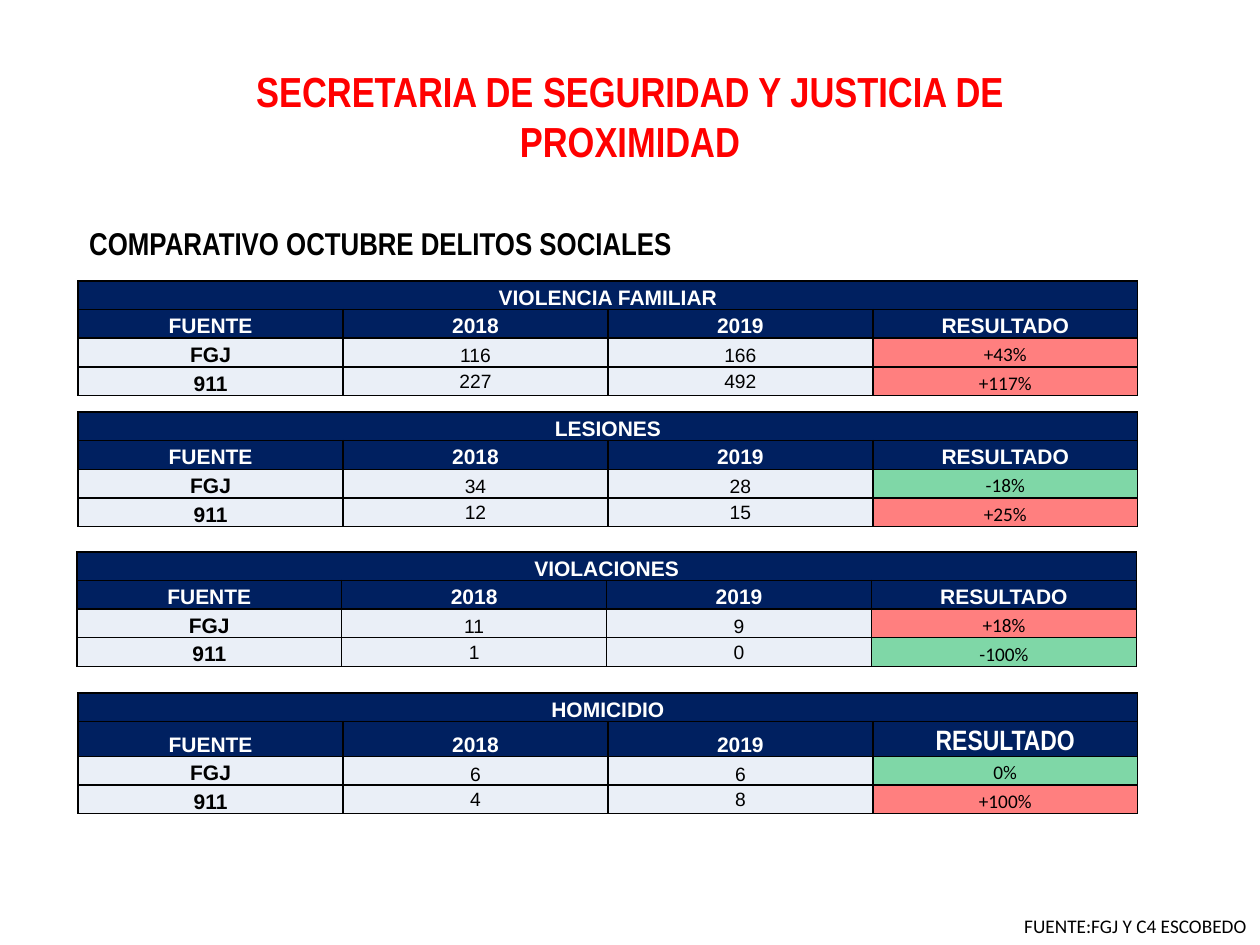
from lxml import etree
from pptx import Presentation
from pptx import util as u
from pptx.dml.color import RGBColor
from pptx.enum import text
from pptx.oxml import ns

COLORS = {
    "title": "FF0000", "ink": "000000", "header": "002060", "header_text": "FFFFFF",
    "body": "EAEFF7", "worse": "FF0000", "better": "00B050",
}
HEADINGS = ["FUENTE", "2018", "2019", "RESULTADO"]
LEFT, TABLE_WIDTH, TABLE_HEIGHT = 0.62, 8.41, 0.91


class SlideBuilder:
    def __init__(self, slide):
        self.slide = slide

    def add_run(self, frame, words, size, font, color, bold=False, align=None):
        paragraph = frame.paragraphs[0]
        paragraph.alignment = align
        run = paragraph.add_run()
        run.text = words
        run.font.size = u.Pt(size)
        run.font.name = font
        run.font.bold = bold
        run.font.color.rgb = RGBColor.from_string(COLORS[color])

    def title(self, words, left, top, width, height):
        heading = self.slide.shapes.title
        heading.left, heading.top = u.Inches(left), u.Inches(top)
        heading.width, heading.height = u.Inches(width), u.Inches(height)
        frame = heading.text_frame
        frame.vertical_anchor = text.MSO_ANCHOR.TOP
        frame.auto_size = text.MSO_AUTO_SIZE.SHAPE_TO_FIT_TEXT
        self.add_run(frame, words, 24, "Arial Narrow", "title", True, text.PP_ALIGN.CENTER)

    def label(self, words, left, top, width, height, size, font, bold=False, wrap=True):
        box = self.slide.shapes.add_textbox(
            u.Inches(left), u.Inches(top), u.Inches(width), u.Inches(height))
        box.text_frame.word_wrap = wrap
        box.text_frame.auto_size = text.MSO_AUTO_SIZE.SHAPE_TO_FIT_TEXT
        self.add_run(box.text_frame, words, size, font, "ink", bold)

    def style_cell(self, cell, fill, alpha=None, anchor=text.MSO_ANCHOR.BOTTOM):
        cell.margin_left = cell.margin_right = cell.margin_top = u.Inches(0.01)
        cell.margin_bottom = 0
        cell.vertical_anchor = anchor
        cell.fill.solid()
        cell.fill.fore_color.rgb = RGBColor.from_string(COLORS[fill])
        properties = cell._tc.get_or_add_tcPr()
        if alpha:
            tint = properties.find(".//" + ns.qn("a:srgbClr"))
            etree.SubElement(tint, ns.qn("a:alpha"), val=str(alpha * 1000))
        # Borders come before the fill
        for position, side in enumerate(("lnL", "lnR", "lnT", "lnB")):
            line = etree.Element(ns.qn("a:" + side), w=str(u.Pt(1)))
            solid = etree.SubElement(line, ns.qn("a:solidFill"))
            etree.SubElement(solid, ns.qn("a:srgbClr"), val=COLORS["ink"])
            properties.insert(position, line)

    def write_cell(self, cell, words, size, font, color, bold=False):
        self.add_run(cell.text_frame, words, size, font, color, bold, text.PP_ALIGN.CENTER)

    def crime_table(self, crime, left, top, records, result_font=("Arial", 12)):
        table = self.slide.shapes.add_table(
            4, len(HEADINGS), u.Inches(left), u.Inches(top),
            u.Inches(TABLE_WIDTH), u.Inches(TABLE_HEIGHT)).table

        # Crime name and column headings
        table.cell(0, 0).merge(table.cell(0, len(HEADINGS) - 1))
        self.write_cell(table.cell(0, 0), crime, 12, "Arial", "header_text", True)
        for column, heading in enumerate(HEADINGS):
            self.style_cell(table.cell(0, column), "header")
            cell = table.cell(1, column)
            self.style_cell(cell, "header")
            font, size = result_font if heading == "RESULTADO" else ("Arial", 12)
            self.write_cell(cell, heading, size, font, "header_text", True)

        # One row per source
        for row, (source, before, after, change, trend) in enumerate(records, 2):
            source_cell, *count_cells, result_cell = table.rows[row].cells
            self.style_cell(source_cell, "body")
            self.write_cell(source_cell, source, 12, "Arial", "ink", True)
            anchor = text.MSO_ANCHOR.MIDDLE if source == "911" else text.MSO_ANCHOR.BOTTOM
            for cell, count in zip(count_cells, (before, after)):
                self.style_cell(cell, "body", anchor=anchor)
                self.write_cell(cell, count, 11, "Arial", "ink")
            self.style_cell(result_cell, trend, alpha=50)
            self.write_cell(result_cell, change, 11, "Calibri", "ink")


def main():
    deck = Presentation()
    deck.slide_width, deck.slide_height = u.Inches(10), u.Inches(7.5)
    page = SlideBuilder(deck.slides.add_slide(deck.slide_layouts.get_by_name("Title Only")))

    # Headings
    page.title("SECRETARIA DE SEGURIDAD Y JUSTICIA DE PROXIMIDAD", 1.9, 0.47, 6.2, 0.91)
    page.label("COMPARATIVO OCTUBRE DELITOS SOCIALES", 0.61, 1.73, 7.38, 0.4,
               18, "Arial Narrow", bold=True)

    # Comparison tables
    page.crime_table("VIOLENCIA FAMILIAR", LEFT, 2.23, [
        ("FGJ", "116", "166", "+43%", "worse"),
        ("911", "227", "492", "+117%", "worse")])
    page.crime_table("LESIONES", LEFT, 3.27, [
        ("FGJ", "34", "28", "-18%", "better"),
        ("911", "12", "15", "+25%", "worse")])
    page.crime_table("VIOLACIONES", 0.61, 4.38, [
        ("FGJ", "11", "9", "+18%", "worse"),
        ("911", "1", "0", "-100%", "better")])
    page.crime_table("HOMICIDIO", LEFT, 5.5, [
        ("FGJ", "6", "6", "0%", "better"),
        ("911", "4", "8", "+100%", "worse")], result_font=("Arial Narrow", 16))

    # Data source
    page.label("FUENTE:FGJ Y C4 ESCOBEDO", 8.03, 7.21, 1.98, 0.29, 11, "Calibri", wrap=False)

    deck.save("out.pptx")


if __name__ == "__main__":
    main()
